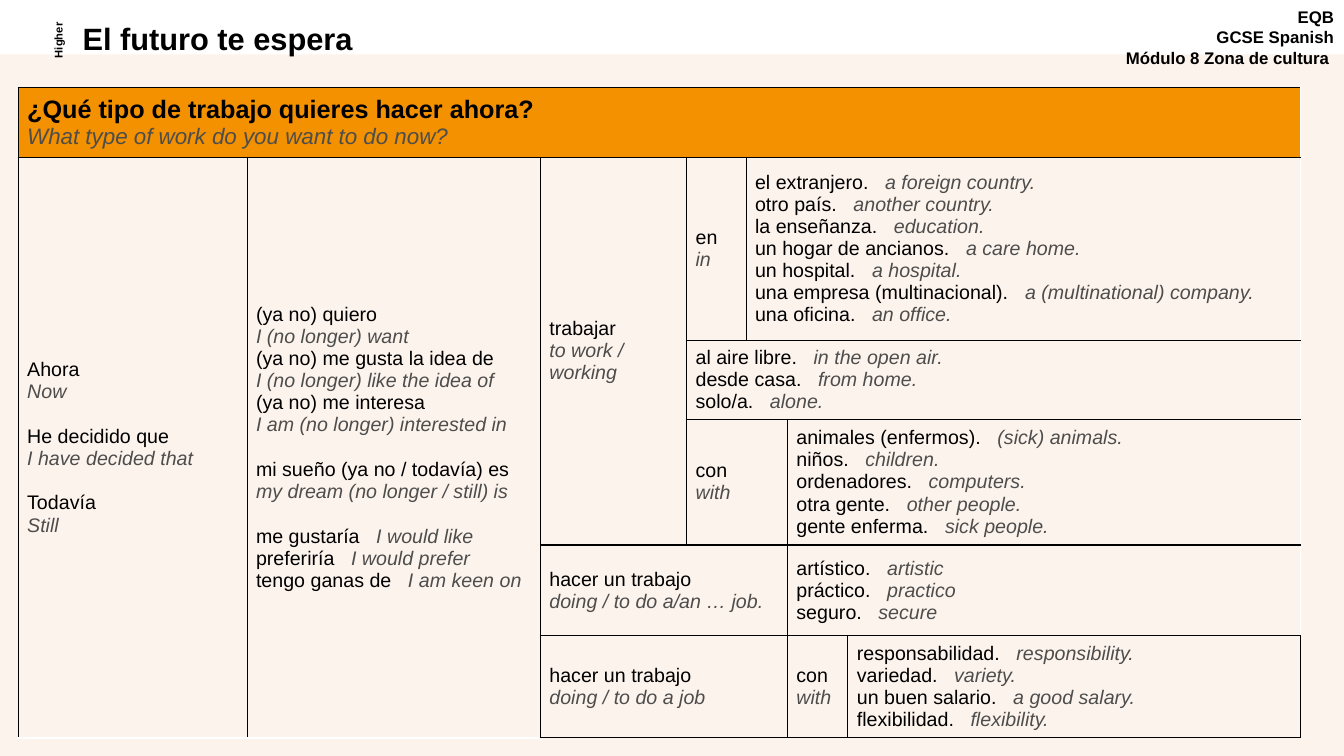
import pptx
import pptx.util
import pptx.dml.color
import pptx.enum.shapes
import pptx.enum.text
import lxml.etree

Inches = pptx.util.Inches
Pt = pptx.util.Pt
Color = pptx.dml.color.RGBColor
Align = pptx.enum.text.PP_ALIGN
Anchor = pptx.enum.text.MSO_ANCHOR

BLACK = Color(0x00, 0x00, 0x00)
GREY = Color(0x4D, 0x4D, 0x4C)
CREAM = Color(0xFD, 0xF3, 0xED)
ORANGE = Color(0xF3, 0x91, 0x00)
FONT = "Arial"
SIZE = 14
LINE = 16.1
NS = "http://schemas.openxmlformats.org/drawingml/2006/main"

COLS = [2.27, 2.91, 1.45, 0.59, 0.41, 0.6, 4.49]
ROWS = [0.69, 1.82, 0.74, 1.18, 0.9, 0.96]

# Cell: row, column, rows spanned, columns spanned, groups of (Spanish, English)
STACKED = [
    (1, 0, 5, 1, [[("Ahora", "Now")],
                  [("He decidido que", "I have decided that")],
                  [("Todavía", "Still")]]),
    (1, 2, 3, 1, [[("trabajar", "to work / working")]]),
    (1, 3, 1, 1, [[("en", "in")]]),
    (3, 3, 1, 2, [[("con", "with")]]),
    (4, 2, 1, 3, [[("hacer un trabajo", "doing / to do a/an … job.")]]),
    (5, 2, 1, 3, [[("hacer un trabajo", "doing / to do a job")]]),
    (5, 5, 1, 1, [[("con", "with")]]),
]
WISHES = [
    [("(ya no) quiero", "I (no longer) want"),
     ("(ya no) me gusta la idea de", "I (no longer) like the idea of"),
     ("(ya no) me interesa", "I am (no longer) interested in")],
    [("mi sueño (ya no / todavía) es", "my dream (no longer / still) is")],
]
HOPES = [("me gustaría", "I would like"), ("preferiría", "I would prefer"),
         ("tengo ganas de", "I am keen on")]
INLINE = [
    (1, 4, 1, 3, [("el extranjero.", "a foreign country."),
                  ("otro país.", "another country."),
                  ("la enseñanza.", "education."),
                  ("un hogar de ancianos.", "a care home."),
                  ("un hospital.", "a hospital."),
                  ("una empresa (multinacional).", "a (multinational) company."),
                  ("una oficina.", "an office.")]),
    (2, 3, 1, 4, [("al aire libre.", "in the open air."),
                  ("desde casa.", "from home."), ("solo/a.", "alone.")]),
    (3, 5, 1, 2, [("animales (enfermos).", "(sick) animals."),
                  ("niños.", "children."), ("ordenadores.", "computers."),
                  ("otra gente.", "other people."),
                  ("gente enferma.", "sick people.")]),
    (4, 5, 1, 2, [("artístico.", "artistic"), ("práctico.", "practico"),
                  ("seguro.", "secure")]),
    (5, 6, 1, 1, [("responsabilidad.", "responsibility."),
                  ("variedad.", "variety."),
                  ("un buen salario.", "a good salary."),
                  ("flexibilidad.", "flexibility.")]),
]


def style(font, size, color=BLACK, bold=False, italic=False):
    font.name = FONT
    font.size = Pt(size)
    font.color.rgb = color
    font.bold = bold
    font.italic = italic


def add_line(frame, text=""):
    line = frame.paragraphs[0]
    if line.runs:
        line = frame.add_paragraph()
    line.text = text
    return line


def add_stack(frame, groups):
    for group in groups:
        for pos, (spanish, english) in enumerate(group):
            line = add_line(frame, spanish)
            if pos == 0 and group is not groups[0]:
                line.space_before = Pt(LINE)
            style(line.font, SIZE)
            style(add_line(frame, english).font, SIZE, GREY, italic=True)


def add_pairs(frame, pairs, before=0):
    for pos, (spanish, english) in enumerate(pairs):
        line = add_line(frame)
        if pos == 0 and before:
            line.space_before = Pt(before)
        for text, color in ((spanish, BLACK), (" ", BLACK), (english, GREY)):
            run = line.add_run()
            run.text = text
            style(run.font, SIZE, color, italic=color == GREY)
            if text == " ":
                run.font._element.set("spc", "780")


def add_edge(cell, side, width):
    props = cell._tc.get_or_add_tcPr()
    edge = lxml.etree.SubElement(props, f"{{{NS}}}ln{side}", w=str(Pt(width)))
    fill = lxml.etree.SubElement(edge, f"{{{NS}}}solidFill")
    lxml.etree.SubElement(fill, f"{{{NS}}}srgbClr", val=str(BLACK))


def add_cell(table, row, col, high, wide):
    last_row, last_col = row + high - 1, col + wide - 1
    for r in range(row, row + high):
        for c in range(col, col + wide):
            cell = table.cell(r, c)
            for side, outer, width in (
                    ("L", c == col, 0.75), ("R", c == last_col, 0.75),
                    ("T", r == row, 1 if r in (3, 4, 5) else 0.75),
                    ("B", r == last_row, 1 if r in (2, 3, 4) else 0.75)):
                if outer:
                    add_edge(cell, side, width)
            cell.fill.background()
    cell = table.cell(row, col)
    if high * wide > 1:
        cell.merge(table.cell(last_row, last_col))
    cell.vertical_anchor = Anchor.MIDDLE
    cell.margin_left = cell.margin_right = Inches(0.09)
    cell.margin_top = cell.margin_bottom = Inches(0.04)
    return cell


def add_label(slide, box, lines, size, align, turn=0):
    label = slide.shapes.add_textbox(*map(Inches, box))
    label.rotation = turn
    label.text_frame.word_wrap = True
    for text in lines:
        line = add_line(label.text_frame, text)
        line.alignment = align
        style(line.font, size, bold=True)


def add_title(slide, text):
    band = slide.shapes.add_shape(
        pptx.enum.shapes.MSO_SHAPE.RECTANGLE,
        *map(Inches, (0, 0.54, 13.33, 6.96)))
    band.shadow.inherit = False
    band.fill.solid()
    band.fill.fore_color.rgb = CREAM
    band.line.fill.background()
    title = slide.shapes.title
    band._element.addnext(title._element)
    title.left, title.top, title.width, title.height = map(
        Inches, (0.72, 0.19, 8.53, 0.43))
    frame = title.text_frame
    frame.auto_size = pptx.enum.text.MSO_AUTO_SIZE.NONE
    frame.vertical_anchor = Anchor.TOP
    line = add_line(frame, text)
    line.alignment = Align.LEFT
    line.line_spacing = 0.9
    style(line.font, 22, bold=True)


def add_grid(slide):
    table = slide.shapes.add_table(
        len(ROWS), len(COLS), Inches(0.18), Inches(0.87),
        Inches(sum(COLS)), Inches(sum(ROWS))).table
    table.first_row = table.horz_banding = False
    for col, width in zip(table.columns, COLS):
        col.width = Inches(width)
    for row, height in zip(table.rows, ROWS):
        row.height = Inches(height)

    head = add_cell(table, 0, 0, 1, 7)
    head.fill.solid()
    head.fill.fore_color.rgb = ORANGE
    asked = add_line(head.text_frame, "¿Qué tipo de trabajo quieres hacer ahora?")
    style(asked.font, 18, bold=True)
    meant = add_line(head.text_frame, "What type of work do you want to do now?")
    style(meant.font, 16, GREY, italic=True)

    for *place, groups in STACKED:
        add_stack(add_cell(table, *place).text_frame, groups)
    for *place, pairs in INLINE:
        add_pairs(add_cell(table, *place).text_frame, pairs)
    wish = add_cell(table, 1, 1, 5, 1).text_frame
    add_stack(wish, WISHES)
    add_pairs(wish, HOPES, LINE)


def main():
    """Build the Spanish sentence-builder slide and save it."""
    deck = pptx.Presentation()
    deck.slide_width, deck.slide_height = Inches(13.33), Inches(7.5)
    slide = deck.slides.add_slide(deck.slide_layouts[5])
    add_title(slide, "El futuro te espera")
    add_label(slide, (10.99, 0.02, 2.34, 0.77),
              ["EQB", "GCSE Spanish", "Módulo 8 Zona de cultura "],
              12, Align.RIGHT)
    add_label(slide, (0.18, 0.29, 0.78, 0.22), ["Higher"], 8, Align.CENTER, 270)
    add_grid(slide)
    deck.save("out.pptx")


if __name__ == "__main__":
    main()
